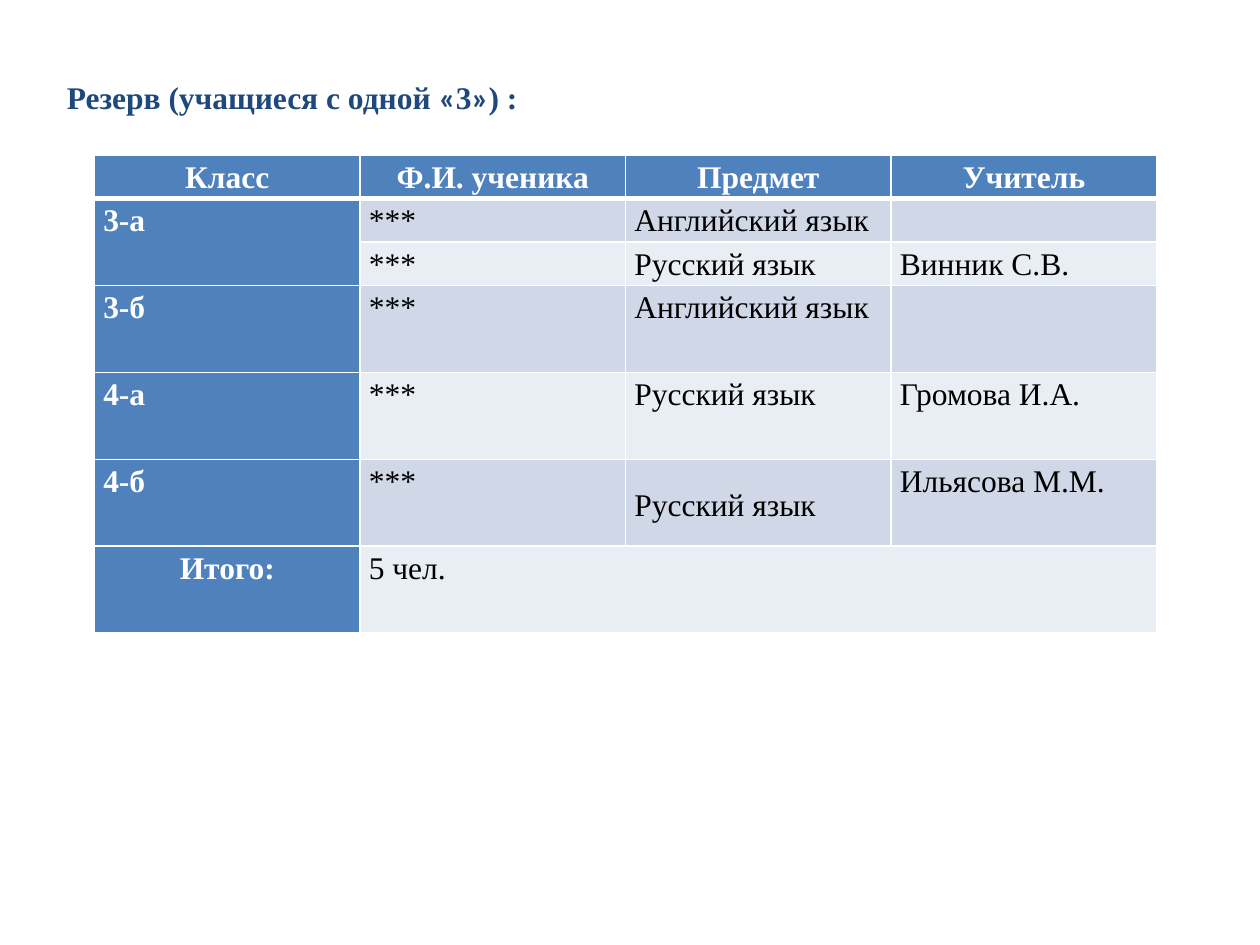
"""Builds a slide listing the reserve pupils in a table."""
import pptx
import pptx.dml.color
import pptx.enum.text
import pptx.oxml
import pptx.oxml.ns
import pptx.util

Inches = pptx.util.Inches
Align = pptx.enum.text.PP_ALIGN
Anchor = pptx.enum.text.MSO_ANCHOR
NAVY = pptx.dml.color.RGBColor(0x1F, 0x49, 0x7D)
BLUE = pptx.dml.color.RGBColor(0x4F, 0x81, 0xBD)
BAND_DARK = pptx.dml.color.RGBColor(0xD0, 0xD8, 0xE8)
BAND_LIGHT = pptx.dml.color.RGBColor(0xE9, 0xED, 0xF4)
WHITE = pptx.dml.color.RGBColor(0xFF, 0xFF, 0xFF)
BLACK = pptx.dml.color.RGBColor(0, 0, 0)
SERIF = "Times New Roman"


def add_span(para, text, color, bold, name=SERIF):
    span = para.add_run()
    span.text = text
    span.font.color.rgb = color
    for key, value in {"name": name, "size": pptx.util.Pt(18), "bold": bold}.items():
        setattr(span.font, key, value)


def add_border(cell, index, side, points):
    line = pptx.oxml.parse_xml(
        f'<a:{side} {pptx.oxml.ns.nsdecls("a")} w="{pptx.util.Pt(points)}">'
        f'<a:solidFill><a:srgbClr val="{WHITE}"/></a:solidFill></a:{side}>')
    cell._tc.get_or_add_tcPr().insert(index, line)


deck = pptx.Presentation()
deck.slide_width, deck.slide_height = Inches(10), Inches(7.5)
slide = deck.slides.add_slide(deck.slide_layouts[5])

title = slide.shapes.title
title_box = {"left": 0.43, "top": 0.57, "width": 3.88, "height": 0.4}
for key, value in title_box.items():
    setattr(title, key, Inches(value))
title_format = {"word_wrap": False, "vertical_anchor": Anchor.MIDDLE,
                "auto_size": pptx.enum.text.MSO_AUTO_SIZE.SHAPE_TO_FIT_TEXT}
for key, value in title_format.items():
    setattr(title.text_frame, key, value)
title_para = title.text_frame.paragraphs[0]
title_para.alignment = Align.LEFT
for text, name in [("Резерв (учащиеся с одной ", SERIF), ("«", "Calibri"), ("3", SERIF),
                   ("»", "Calibri"), (") :", SERIF)]:
    add_span(title_para, text, NAVY, True, name)

pupils = [
    ["Класс", "Ф.И. ученика", "Предмет", "Учитель"],
    ["3-а", "***", "Английский язык", ""],
    ["", "***", "Русский язык", "Винник С.В."],
    ["3-б", "***", "Английский язык", ""],
    ["4-а", "***", "Русский язык", "Громова И.А."],
    ["4-б", "***", "Русский язык", "Ильясова М.М."],
    ["Итого:", "5 чел.", "", ""],
]
row_heights = [0.345] * 3 + [0.69] * 4
cell_format = {"margin_left": Inches(0.07), "margin_right": Inches(0.07),
               "margin_top": 0, "margin_bottom": 0}

table = slide.shapes.add_table(len(pupils), 4, Inches(0.75), Inches(1.23),
                               Inches(8.43), Inches(sum(row_heights))).table
table.first_col = True
for row, height in zip(table.rows, row_heights):
    row.height = Inches(height)

for r, texts in enumerate(pupils):
    for c, text in enumerate(texts):
        cell = table.cell(r, c)
        heading = r == 0 or c == 0
        for key, value in cell_format.items():
            setattr(cell, key, value)
        cell.fill.solid()
        cell.fill.fore_color.rgb = BLUE if heading else BAND_DARK if r % 2 else BAND_LIGHT
        widths = {"lnL": 1, "lnR": 1, "lnT": 3 if r == 1 else 1, "lnB": 3 if r == 0 else 1}
        for index, (side, points) in enumerate(widths.items()):
            add_border(cell, index, side, points)
        if text:
            para = cell.text_frame.paragraphs[0]
            para.line_spacing = 1.15
            if r == 0 or text == "Итого:":
                para.alignment = Align.CENTER
            add_span(para, text, WHITE if heading else BLACK, heading)

table.cell(1, 0).merge(table.cell(2, 0))
table.cell(6, 1).merge(table.cell(6, 3))
table.cell(5, 2).vertical_anchor = Anchor.MIDDLE

deck.save("out.pptx")
